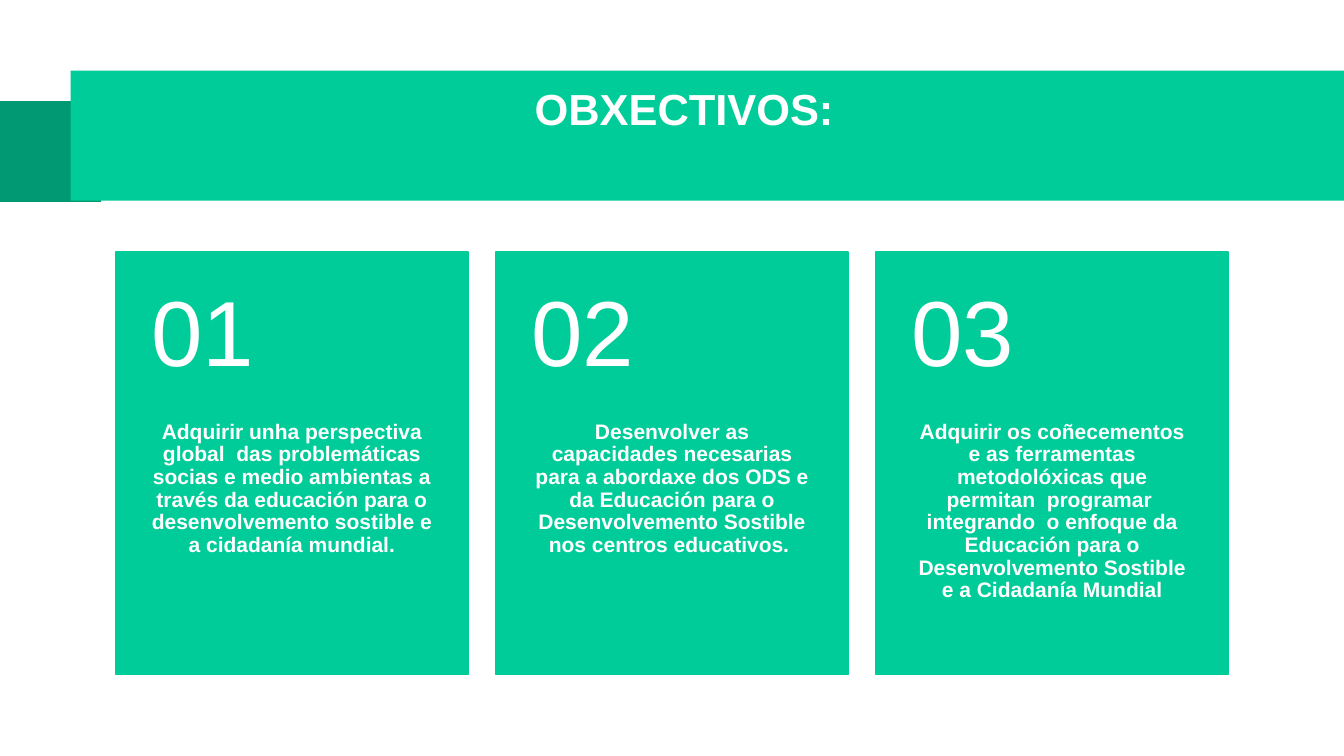
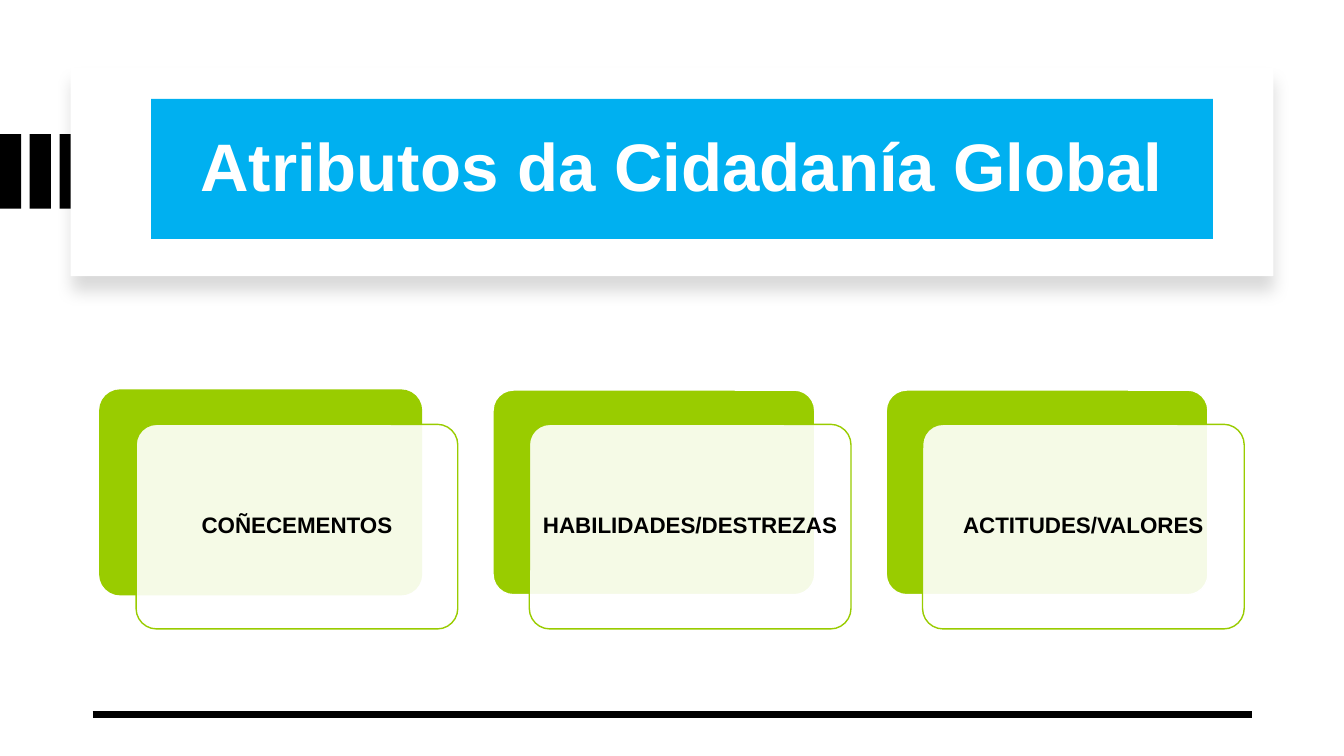
from pptx import Presentation, util as u
from pptx.dml.color import RGBColor
from pptx.enum import shapes as shp, text as txt
from pptx.oxml import parse_xml
from pptx.oxml.ns import nsdecls, qn

# Shared look
COLORS = {"green": "00CC99", "fold": "009973", "fold_dark": "00664D", "blue": "00B0F0",
          "lime": "99CC00", "white": "FFFFFF", "black": "000000"}
FONT = "Arial"
WIDTH, HEIGHT = 13.33, 7.5
RECT, ROUNDED = shp.MSO_SHAPE.RECTANGLE, shp.MSO_SHAPE.ROUNDED_RECTANGLE
TOP, MIDDLE = txt.MSO_ANCHOR.TOP, txt.MSO_ANCHOR.MIDDLE
LEFT, CENTER = txt.PP_ALIGN.LEFT, txt.PP_ALIGN.CENTER

OBJECTIVES = [
    "Adquirir unha perspectiva global  das problemáticas socias e medio ambientas a través "
    "da educación para o desenvolvemento sostible e a cidadanía mundial.",
    "Desenvolver as capacidades necesarias para a abordaxe dos ODS e da Educación para o "
    "Desenvolvemento Sostible nos centros educativos. ",
    "Adquirir os coñecementos e as ferramentas metodolóxicas que permitan  programar  "
    "integrando  o enfoque da Educación para o Desenvolvemento Sostible e a Cidadanía Mundial",
]
ATTRIBUTES = ["COÑECEMENTOS", "HABILIDADES/DESTREZAS", "ACTITUDES/VALORES"]


def rgb(name):
    return RGBColor.from_string(COLORS[name])


def inches(box):
    return [u.Inches(value) for value in box]


def paint(shape, fill, line=None):
    shape.shadow.inherit = False
    shape.fill.solid()
    shape.fill.fore_color.rgb = rgb(fill)
    if line:
        shape.line.color.rgb = rgb(line)
        shape.line.width = u.Pt(1)
    else:
        shape.line.fill.background()
    return shape


def add_block(slide, box, fill, line=None, kind=RECT):
    return paint(slide.shapes.add_shape(kind, *inches(box)), fill, line)


def add_fold(slide, points, fill):
    builder = slide.shapes.build_freeform(*points[0], scale=u.Inches(1))
    builder.add_line_segments(points[1:], close=True)
    paint(builder.convert_to_shape(), fill)


def write(shape, words, size, color="white", bold=True, align=CENTER, anchor=MIDDLE,
          insets=(0, 0, 0, 0), spacing=0.9):
    frame = shape.text_frame
    frame.text = words
    frame.word_wrap = True
    frame.auto_size = txt.MSO_AUTO_SIZE.NONE
    frame.vertical_anchor = anchor
    (frame.margin_left, frame.margin_top,
     frame.margin_right, frame.margin_bottom) = inches(insets)
    paragraph = frame.paragraphs[0]
    paragraph.alignment = align
    paragraph.line_spacing = spacing
    for run in paragraph.runs:
        font = run.font
        font.name, font.size, font.bold = FONT, u.Pt(size), bold
        font.color.rgb = rgb(color)


def place_title(slide, words, box, size, anchor=MIDDLE):
    title = slide.shapes.title
    title.left, title.top, title.width, title.height = inches(box)
    write(title, words, size, anchor=anchor, spacing=0.93)
    # Bring the title in front of its band
    slide.shapes._spTree.append(title._element)
    return title


def row_of_boxes(left, top, width, height, pitch, count):
    return [(left + i * pitch, top, width, height) for i in range(count)]


# Objectives slide
def ribbon(slide, left, top, height):
    right = left + 0.19
    add_fold(slide, [(right, top + 1.52), (left - 0.25, top + 1.69),
                     (left - 0.25, top + 0.37), (right, top + 0.22)], "fold")
    add_fold(slide, [(right, top + 1.47), (left, top + 1.33),
                     (left, top), (right, top + 0.15)], "fold_dark")
    add_block(slide, (left, top, WIDTH - left, height), "green")


def objective_card(slide, box, number, words):
    left, top, width, height = box
    number_height = 0.4 * height
    add_block(slide, box, "green", "green")
    body = slide.shapes.add_textbox(
        *inches((left, top + number_height, width, height - number_height)))
    write(body, words, 15, anchor=TOP, insets=(0.35, 0, 0.35, 0.36))
    heading = slide.shapes.add_textbox(*inches((left, top, width, number_height)))
    write(heading, f"{number:02d}", 66, bold=False, align=LEFT,
          insets=(0.35, 0.18, 0.35, 0.18))


def objectives_slide(slide):
    ribbon(slide, 0.7, 0.7, 1.29)
    place_title(slide, "OBXECTIVOS:", (1.15, 0.86, 11.27, 0.96), 31, TOP)
    boxes = row_of_boxes(1.15, 2.5, 3.49, 4.19, 3.77, len(OBJECTIVES))
    for number, (box, words) in enumerate(zip(boxes, OBJECTIVES), 1):
        objective_card(slide, box, number, words)


# Attributes slide
def title_panel(slide, box):
    panel = add_block(slide, box, "white")
    effects = panel._element.spPr.find(qn("a:effectLst"))
    effects.append(parse_xml(
        f'<a:outerShdw {nsdecls("a")} blurRad="{u.Pt(11)}" dist="{u.Pt(10)}" dir="5400000" '
        f'algn="t" rotWithShape="0"><a:srgbClr val="{COLORS["black"]}">'
        '<a:alpha val="15000"/></a:srgbClr></a:outerShdw>'))


def bottom_rule(slide, left, right, y):
    rule = slide.shapes.add_connector(
        shp.MSO_CONNECTOR.STRAIGHT, *inches((left, y, right, y)))
    rule.line.color.rgb = rgb("black")
    rule.line.width = u.Pt(4.5)
    rule._element.spPr.append(parse_xml(f'<a:effectLst {nsdecls("a")}/>'))


def attribute_card(slide, box, words, edge):
    left, top, width, height = box
    back = add_block(slide, box, "lime", edge, ROUNDED)
    front = add_block(slide, (left + 0.36, top + 0.34, width, height), "white", "lime", ROUNDED)
    for card in (back, front):
        card.adjustments[0] = 0.1
    # Let the back card show faintly through the front one
    tint = front._element.spPr.find(qn("a:solidFill"))[0]
    tint.append(parse_xml(f'<a:alpha {nsdecls("a")} val="90000"/>'))
    write(front, words, 16, "black", insets=(0.05,) * 4)


def attributes_slide(slide):
    for bar in row_of_boxes(0, 1.33, 0.21, 0.74, 0.59 / 2, 3):
        add_block(slide, bar, "black")
    title_panel(slide, (0.7, 0.67, 11.93, 2.07))
    title = place_title(slide, "Atributos da Cidadanía Global", (1.5, 0.98, 10.53, 1.39), 48)
    title.fill.solid()
    title.fill.fore_color.rgb = rgb("blue")
    bottom_rule(slide, 0.92, 12.42, 7.09)
    boxes = row_of_boxes(0.99, 3.87, 3.19, 2.03, 3.9, len(ATTRIBUTES))
    for box, words, edge in zip(boxes, ATTRIBUTES, ("lime", "white", "white")):
        attribute_card(slide, box, words, edge)


def main():
    deck = Presentation()
    deck.slide_width, deck.slide_height = inches((WIDTH, HEIGHT))
    title_only = deck.slide_layouts[5]
    for build in (objectives_slide, attributes_slide):
        build(deck.slides.add_slide(title_only))
    deck.save("out.pptx")


if __name__ == "__main__":
    main()
